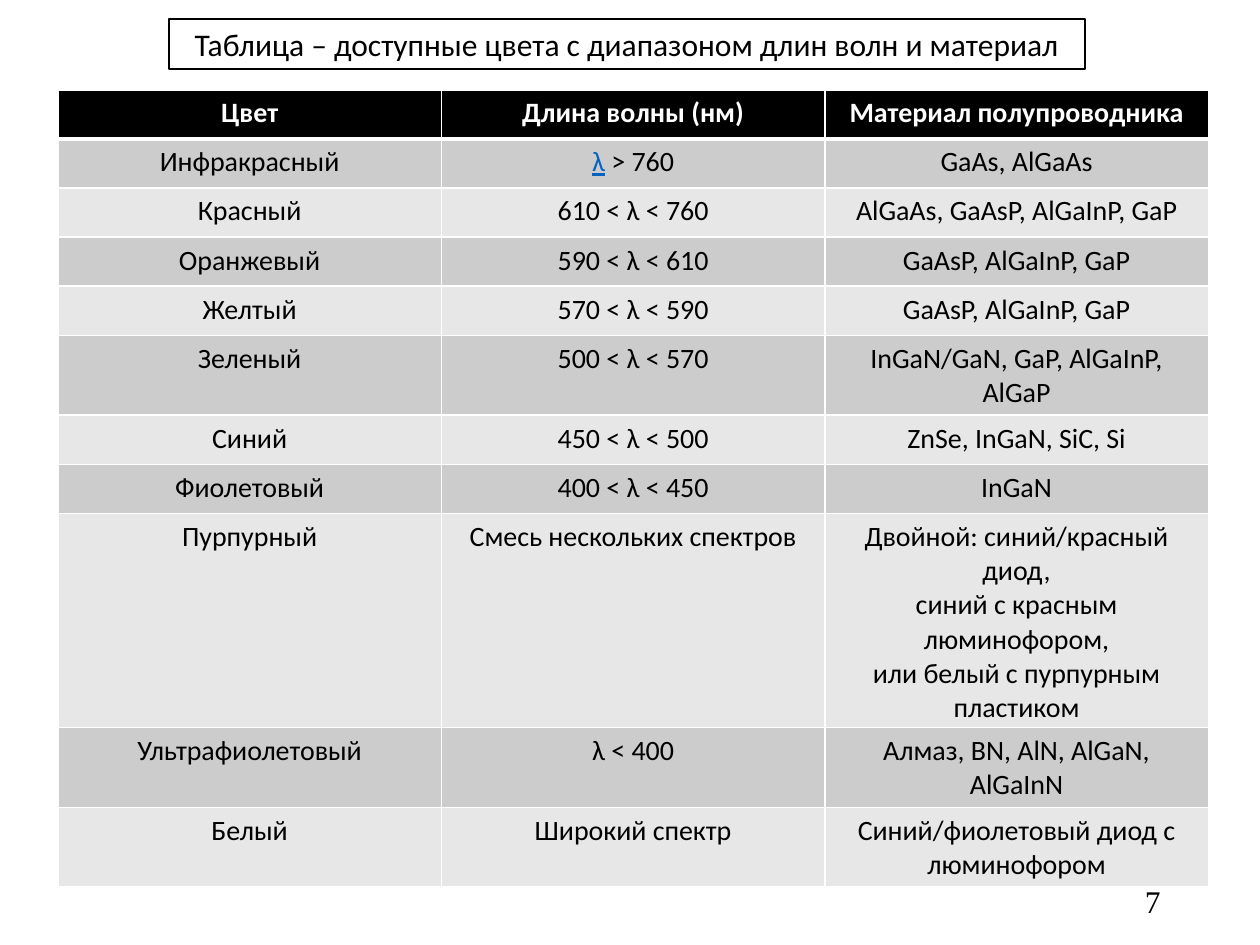
from lxml import etree
from pptx import Presentation
from pptx.dml.color import RGBColor
from pptx.enum.text import MSO_ANCHOR, MSO_AUTO_SIZE, PP_ALIGN
from pptx.oxml.ns import qn
from pptx.util import Inches, Pt

CENTER, RIGHT = PP_ALIGN.CENTER, PP_ALIGN.RIGHT
MIDDLE = MSO_ANCHOR.MIDDLE
NO_FIT = MSO_AUTO_SIZE.NONE
TITLE_ONLY = 5

WIDE, HIGH = 10, 7.5
BLACK, WHITE, BLUE = "000000", "FFFFFF", "0563C1"
BANDS = ("CCCCCC", "E7E7E7")
LINE = 0.39  # height of a one-line row
TITLE = "Таблица – доступные цвета с диапазоном длин волн и материал"

# Row height, then the three cells
ROWS = [
    (LINE, "Цвет", "Длина волны (нм)", "Материал полупроводника"),
    (LINE, "Инфракрасный", "λ > 760", "GaAs, AlGaAs"),
    (LINE, "Красный", "610 < λ < 760", "AlGaAs, GaAsP, AlGaInP, GaP"),
    (LINE, "Оранжевый", "590 < λ < 610", "GaAsP, AlGaInP, GaP"),
    (LINE, "Желтый", "570 < λ < 590", "GaAsP, AlGaInP, GaP"),
    (0.63, "Зеленый", "500 < λ < 570", "InGaN/GaN, GaP, AlGaInP, AlGaP"),
    (LINE, "Синий", "450 < λ < 500", "ZnSe, InGaN, SiC, Si"),
    (LINE, "Фиолетовый", "400 < λ < 450", "InGaN"),
    (1.7, "Пурпурный", "Смесь нескольких спектров",
     "Двойной: синий/красный диод,\vсиний с красным люминофором,"
     "\vили белый с пурпурным пластиком"),
    (0.63, "Ультрафиолетовый", "λ < 400", "Алмаз, BN, AlN, AlGaN, AlGaInN"),
    (0.63, "Белый", "Широкий спектр", "Синий/фиолетовый диод с люминофором"),
]


def color(code):
    return RGBColor.from_string(code)


def box(left, top, width, height):
    """Turn shares of the slide into lengths."""
    return [Inches(v * side) for v, side in
            zip((left, top, width, height), (WIDE, HIGH, WIDE, HIGH))]


def style(run, code=BLACK, **form):
    for key, value in form.items():
        setattr(run.font, key, value)
    run.font.color.rgb = color(code)


def write(frame, text, size, align=CENTER, code=BLACK, name="Calibri", bold=False):
    frame.text = text
    para = frame.paragraphs[0]
    para.alignment = align
    for run in para.runs:
        style(run, code, size=Pt(size), name=name, bold=bold)
    # Line breaks take the size of their text
    for gap in para._p.findall(qn("a:br")):
        etree.SubElement(gap, qn("a:rPr")).set("sz", str(size * 100))
    return para


def edge(cell, **widths):
    """Draw white cell borders, given in points by side."""
    props = cell._tc.get_or_add_tcPr()
    for spot, side in enumerate("LRTB"):
        line = etree.Element(qn(f"a:ln{side}"), w=str(Pt(widths.get(side, 1))))
        fill = etree.SubElement(line, qn("a:solidFill"))
        etree.SubElement(fill, qn("a:srgbClr"), val=WHITE)
        props.insert(spot, line)


def add_title(slide):
    title = slide.shapes.title
    title.left, title.top, title.width, title.height = box(0.134, 0.02, 0.727, 0.053)
    title.fill.solid()
    title.fill.fore_color.rgb = color(WHITE)
    title.line.color.rgb = color(BLACK)
    title.line.width = Pt(1)
    frame = title.text_frame
    form = {"auto_size": NO_FIT, "word_wrap": True, "vertical_anchor": MIDDLE}
    for key, value in form.items():
        setattr(frame, key, value)
    write(frame, TITLE, 18)


def add_number(slide):
    frame = slide.shapes.add_textbox(*box(0.706, 0.927, 0.225, 0.053)).text_frame
    frame.word_wrap = True
    frame.vertical_anchor = MIDDLE
    write(frame, "7", 18, RIGHT, name="Times New Roman")


def add_grid(slide):
    high = sum(row[0] for row in ROWS) / HIGH
    table = slide.shapes.add_table(
        len(ROWS), 3, *box(0.046, 0.095, 0.913, high)).table
    for r, (tall, *texts) in enumerate(ROWS):
        table.rows[r].height = Inches(tall)
        head = r == 0
        for c, text in enumerate(texts):
            cell = table.cell(r, c)
            cell.fill.solid()
            cell.fill.fore_color.rgb = color(BLACK if head else BANDS[(r - 1) % 2])
            edge(cell, T=3 if r == 1 else 1, B=3 if head else 1)
            write(cell.text_frame, text, 16, code=WHITE if head else BLACK, bold=head)
    mark_sign(table.cell(1, 1).text_frame)


def mark_sign(frame):
    """Underline the first letter in blue."""
    text = frame.text
    para = write(frame, text[0], 16, code=BLUE)
    para.runs[0].font.underline = True
    style(para.add_run(), size=Pt(16), name="Calibri")
    para.runs[1].text = text[1:]


def main():
    deck = Presentation()
    deck.slide_width, deck.slide_height = Inches(WIDE), Inches(HIGH)
    slide = deck.slides.add_slide(deck.slide_layouts[TITLE_ONLY])
    add_number(slide)
    add_grid(slide)
    add_title(slide)
    deck.save("out.pptx")


if __name__ == "__main__":
    main()
